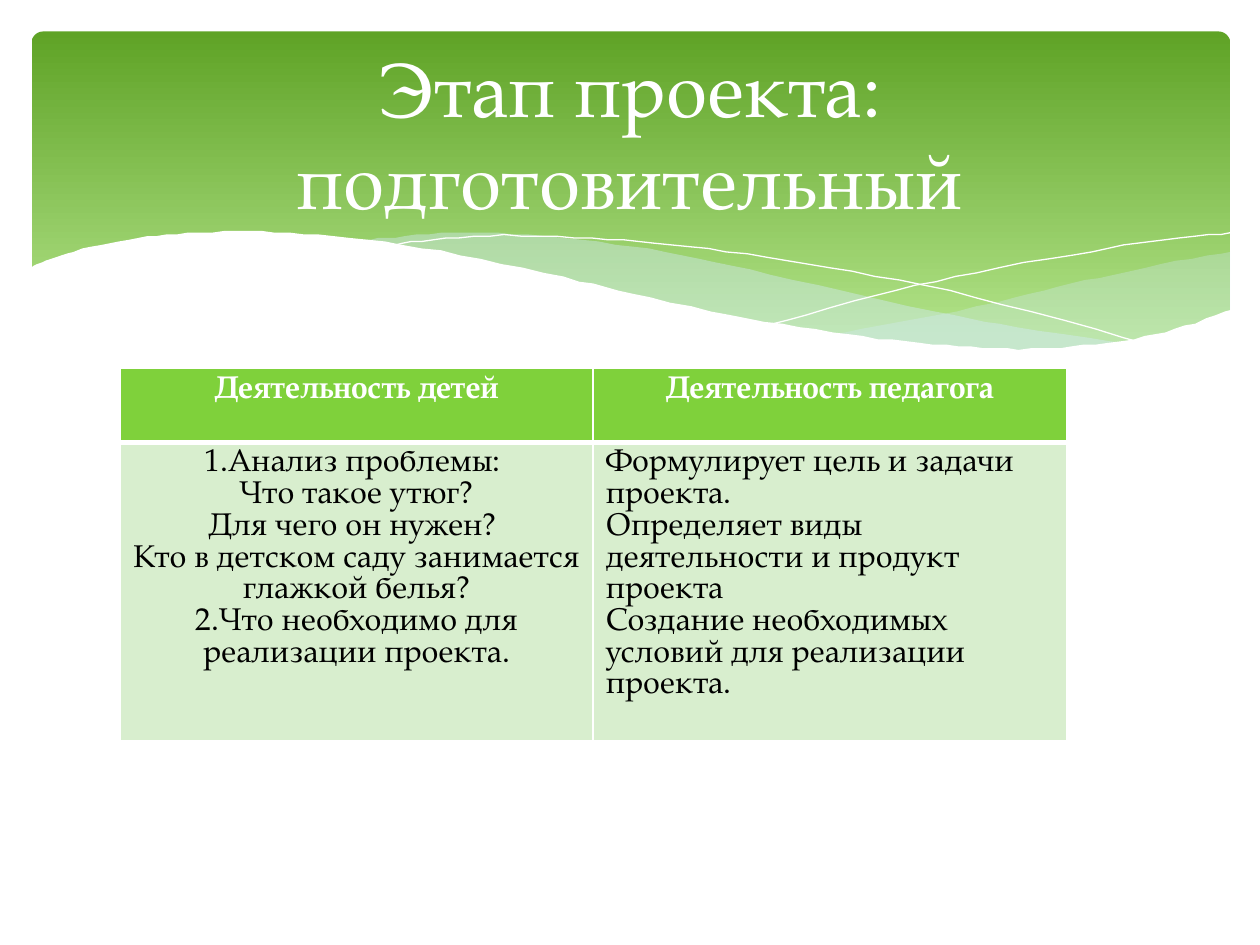
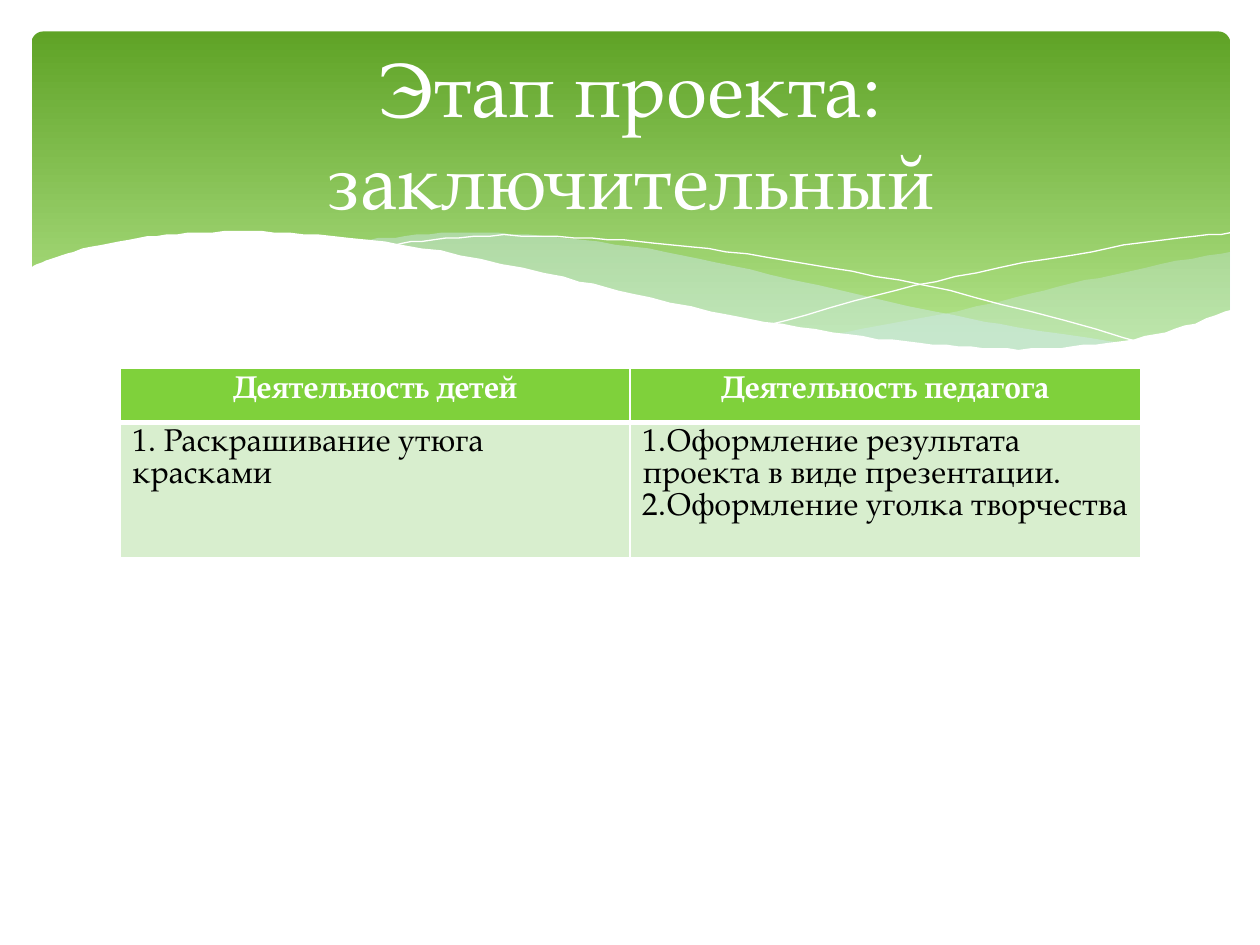
from dataclasses import dataclass

from lxml import etree
from pptx import Presentation
from pptx.dml.color import RGBColor
from pptx.enum.shapes import MSO_SHAPE
from pptx.enum.text import MSO_ANCHOR, PP_ALIGN
from pptx.oxml.ns import qn
from pptx.util import Pt

ROUNDED = MSO_SHAPE.ROUNDED_RECTANGLE
MIDDLE = MSO_ANCHOR.MIDDLE
CENTER, LEFT = PP_ALIGN.CENTER, PP_ALIGN.LEFT


@dataclass(frozen=True)
class Theme:
    font: str = "TeX Gyre Pagella"
    white: str = "FFFFFF"
    black: str = "000000"
    band_top: str = "5FA326"
    band_bottom: str = "B2E389"
    mist: str = "D6ECFF"
    header: str = "7FD13B"
    body: str = "D8EECE"
    title_size: float = 44
    table_size: float = 18
    table_leading: float = 18.1
    cell_margin: float = 7.2
    thin_border: float = 1
    header_border: float = 3


THEME = Theme()
SLIDE_SIZE = (720, 540)
BAND_BOX = (18, 18, 685, 194.5)
TITLE_BOX = (36, 26.5, 648, 98.5)
TABLE_ORIGIN = (68.5, 210.5)
TITLE_ONLY = 5
STEPS_PER_KNOT = 5

RIGHT_MIST_TOP = [
    (685, 126), (645, 133), (602, 142.5), (561.5, 152.5), (507, 164), (458, 173),
]
RIGHT_MIST_BOTTOM = [
    (458, 173), (499.5, 178), (535.5, 181.5), (568, 182), (603.5, 180),
    (633.5, 175.5), (660, 168.5), (685, 160),
]
LEFT_MIST_TOP = [
    (625, 178.5), (563, 169), (515.5, 160), (435, 142), (381.5, 129.5),
    (334, 121.5), (284.5, 116.5), (242, 115), (207.5, 117.5), (188, 119.5),
]
LEFT_MIST_BOTTOM = [
    (188, 119.5), (228, 125.5), (273, 134), (305.5, 142), (363.5, 155),
    (414.5, 165.5), (461, 173.5), (502, 179.5), (547, 182), (592.5, 181.5),
    (625, 178.5),
]
FALLING_LINE = [
    (204.5, 122.5), (229.5, 119), (270.5, 116.5), (319.5, 118), (366, 121.5),
    (420, 129), (482.5, 139.5), (554.5, 155.5), (635, 178),
]
RISING_LINE = [
    (423.5, 167), (482.5, 151), (540.5, 137.5), (605.5, 125.5), (647.5, 119),
    (685, 115),
]
WAVE_CREST = [
    (685.5, 159), (659, 168.5), (629.5, 175.5), (594, 180), (564.5, 181.5),
    (530, 180), (492, 176.5), (448.5, 170.5), (399, 162), (344, 150),
    (304, 140.5), (245, 127.5), (192, 119), (147.5, 115), (109.5, 114.5),
    (77, 116), (50.5, 119.5), (24.5, 125.5), (8, 131), (-1.5, 135.5),
]
WAVE_BASE = [(-1.5, 219), (685.5, 219)]

BAND_CURVES = [
    {"edges": (RIGHT_MIST_TOP, RIGHT_MIST_BOTTOM), "fill": THEME.mist, "opacity": 29},
    {"edges": (LEFT_MIST_TOP, LEFT_MIST_BOTTOM), "fill": THEME.mist, "opacity": 40},
    {"edges": (FALLING_LINE,)},
    {"edges": (RISING_LINE,)},
    {"edges": (WAVE_CREST, WAVE_BASE), "fill": THEME.white},
]

HEADINGS = ("Деятельность детей", "Деятельность педагога")
STAGES = [
    {
        "title": "Этап проекта: подготовительный",
        "column_width": 270.5,
        "row_heights": (42.5, 170.3),
        "alignments": (CENTER, LEFT),
        "activities": (
            [
                "1.Анализ проблемы: ",
                " Что такое утюг? ",
                "Для чего он нужен? ",
                "Кто в детском саду занимается глажкой белья?",
                "2.Что необходимо для реализации проекта.",
            ],
            [
                "Формулирует цель и задачи проекта.",
                "Определяет виды деятельности и продукт проекта",
                "Создание необходимых условий для реализации проекта.",
            ],
        ),
    },
    {
        "title": "Этап проекта: заключительный",
        "column_width": 291.6,
        "row_heights": (31, 77.5),
        "alignments": (LEFT, LEFT),
        "activities": (
            ["1. Раскрашивание утюга красками"],
            [
                "1.Оформление результата проекта в виде презентации.",
                "2.Оформление уголка творчества",
            ],
        ),
    },
]


def rgb(color):
    return RGBColor.from_string(color)


def set_all(target, values):
    for name, value in values.items():
        setattr(target, name, value)


def format_text(paragraph, size, color, align, bold=False):
    paragraph.alignment = align
    set_all(paragraph.font, {"name": THEME.font, "size": Pt(size), "bold": bold})
    paragraph.font.color.rgb = rgb(color)


def spline(before, start, end, after, t):
    return 0.5 * (
        2 * start
        + (end - before) * t
        + (2 * before - 5 * start + 4 * end - after) * t ** 2
        + (3 * start - before - 3 * end + after) * t ** 3
    )


def smooth(knots):
    padded = [knots[0], *knots, knots[-1]]
    points = []
    for neighbours in zip(padded, padded[1:], padded[2:], padded[3:]):
        xs, ys = zip(*neighbours)
        for step in range(STEPS_PER_KNOT):
            t = step / STEPS_PER_KNOT
            points.append((spline(*xs, t), spline(*ys, t)))
    return points + [knots[-1]]


def add_curve(slide, box, edges, fill=None, opacity=100):
    left, top = box[:2]
    outline = [(left + x, top + y) for edge in edges for x, y in smooth(edge)]
    builder = slide.shapes.build_freeform(*outline[0], scale=Pt(1))
    builder.add_line_segments(outline[1:], close=fill is not None)
    curve = builder.convert_to_shape()
    curve.shadow.inherit = False
    if fill is None:
        curve.fill.background()
        curve.line.color.rgb = rgb(THEME.white)
        curve.line.width = Pt(0)
        return
    curve.line.fill.background()
    curve.fill.solid()
    curve.fill.fore_color.rgb = rgb(fill)
    if opacity < 100:
        color = curve._element.spPr.find(qn("a:solidFill"))[0]
        etree.SubElement(color, qn("a:alpha"), val=str(opacity * 1000))


def add_wave_band(slide, box):
    band = slide.shapes.add_shape(ROUNDED, *map(Pt, box))
    band.adjustments[0] = 0.034
    band.shadow.inherit = False
    band.line.fill.background()
    band.fill.gradient()
    band.fill.gradient_angle = 270
    colors = (THEME.band_top, THEME.band_bottom)
    for stop, color, position in zip(band.fill.gradient_stops, colors, (0, 0.9)):
        stop.color.rgb = rgb(color)
        stop.position = position
    for curve in BAND_CURVES:
        add_curve(slide, box, **curve)


def add_title(slide, box, text):
    title = slide.shapes.title
    set_all(title, dict(zip(("left", "top", "width", "height"), map(Pt, box))))
    title.text_frame.text = text
    set_all(title.text_frame, {"vertical_anchor": MIDDLE, "word_wrap": True})
    format_text(title.text_frame.paragraphs[0], THEME.title_size, THEME.white, CENTER)
    slide.shapes._spTree.append(title._element)


def set_borders(cell, bottom_width):
    properties = cell._tc.get_or_add_tcPr()
    widths = dict.fromkeys(("a:lnL", "a:lnR", "a:lnT"), THEME.thin_border)
    widths["a:lnB"] = bottom_width
    for index, (side, width) in enumerate(widths.items()):
        border = etree.Element(qn(side), w=str(Pt(width)))
        fill = etree.SubElement(border, qn("a:solidFill"))
        etree.SubElement(fill, qn("a:srgbClr"), val=THEME.white)
        properties.insert(index, border)


def fill_cell(cell, lines, fill, color, align, bold, bottom_width):
    cell.text = "\n".join(lines)
    cell.fill.solid()
    cell.fill.fore_color.rgb = rgb(fill)
    set_all(cell, dict.fromkeys(("margin_left", "margin_right"), Pt(THEME.cell_margin)))
    for paragraph in cell.text_frame.paragraphs:
        format_text(paragraph, THEME.table_size, color, align, bold)
        paragraph.line_spacing = Pt(THEME.table_leading)
    set_borders(cell, bottom_width)


def add_activity_table(slide, box, stage):
    table = slide.shapes.add_table(2, len(HEADINGS), *map(Pt, box)).table
    for row, height in zip(table.rows, stage["row_heights"]):
        row.height = Pt(height)
    columns = zip(HEADINGS, stage["activities"], stage["alignments"])
    for index, (heading, activities, align) in enumerate(columns):
        table.columns[index].width = Pt(stage["column_width"])
        fill_cell(table.cell(0, index), [heading], THEME.header, THEME.white,
                  CENTER, True, THEME.header_border)
        fill_cell(table.cell(1, index), activities, THEME.body, THEME.black,
                  align, False, THEME.thin_border)


def add_stage_slide(presentation, stage):
    slide = presentation.slides.add_slide(presentation.slide_layouts[TITLE_ONLY])
    table_width = len(HEADINGS) * stage["column_width"]
    table_box = (*TABLE_ORIGIN, table_width, sum(stage["row_heights"]))
    add_wave_band(slide, BAND_BOX)
    add_activity_table(slide, table_box, stage)
    add_title(slide, TITLE_BOX, stage["title"])


def main():
    presentation = Presentation()
    presentation.slide_width, presentation.slide_height = map(Pt, SLIDE_SIZE)
    for stage in STAGES:
        add_stage_slide(presentation, stage)
    presentation.save("out.pptx")


if __name__ == "__main__":
    main()
